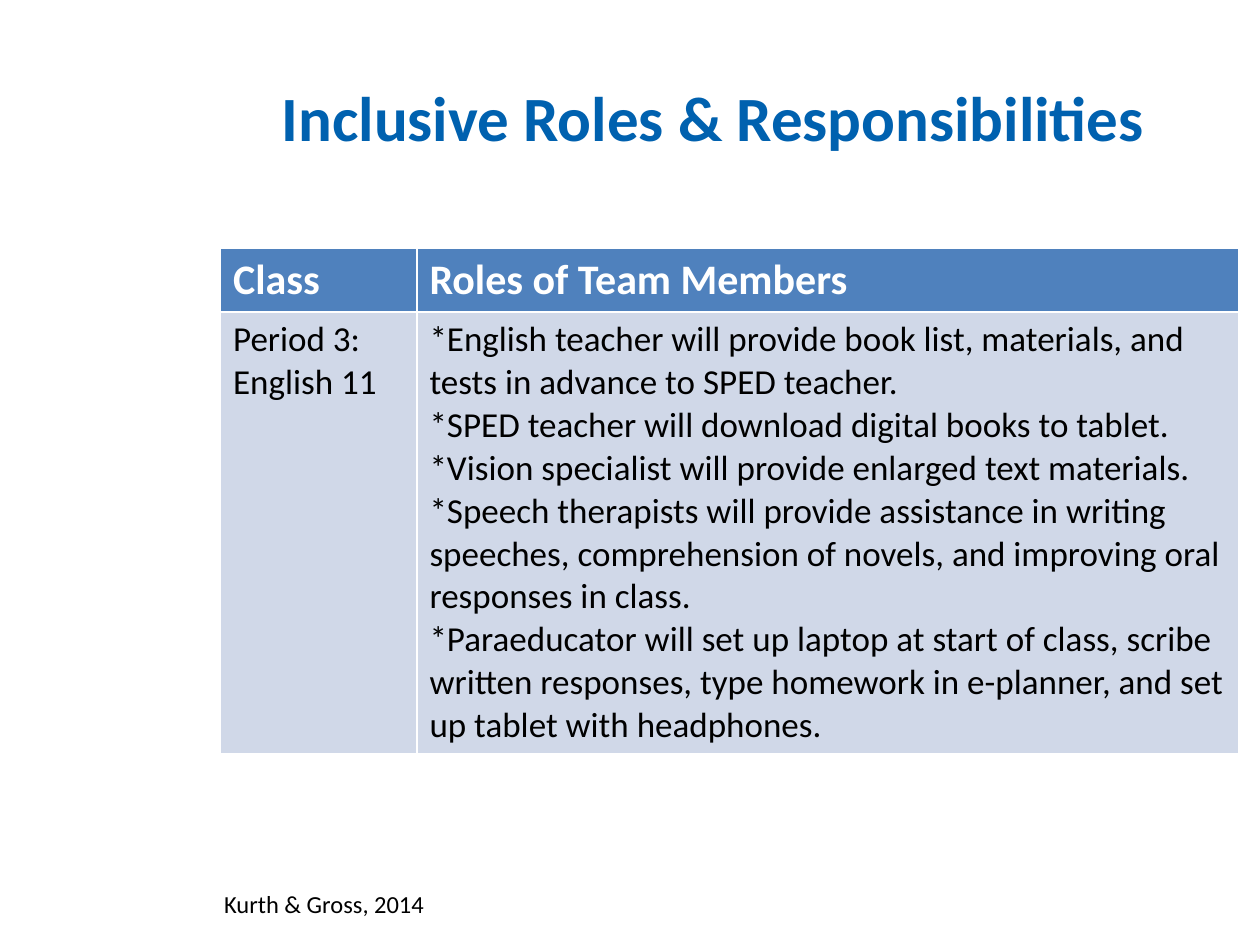
from dataclasses import dataclass

from pptx import Presentation
from pptx import util as u
from pptx.dml.color import RGBColor
from pptx.enum import text


@dataclass(frozen=True)
class Theme:
    font: str = "Calibri"
    title: str = "0061AF"
    header_fill: str = "4F81BD"
    header_text: str = "FFFFFF"
    body_fill: str = "D0D8E8"
    body_text: str = "000000"
    title_size: int = 36
    header_size: int = 24
    body_size: int = 20
    source_size: int = 14


THEME = Theme()
WIDTH, HEIGHT = u.Inches(10), u.Inches(7.5)

HEADINGS = ["Class", "Roles of Team Members"]
CLASS_NAME = ["Period 3: English 11"]
ROLES = [
    "*English teacher will provide book list, materials, and tests in advance to SPED teacher.",
    "*SPED teacher will download digital books to tablet.",
    "*Vision specialist will provide enlarged text materials.",
    "*Speech therapists will provide assistance in writing speeches, "
    "comprehension of novels, and improving oral responses in class.",
    "*Paraeducator will set up laptop at start of class, scribe written responses, "
    "type homework in e-planner, and set up tablet with headphones.",
]


def box(left, top, width, height):
    """Turn inches into shares of the slide's size, as left, top, width, height."""
    return (int(WIDTH * left / 10), int(HEIGHT * top / 7.5),
            int(WIDTH * width / 10), int(HEIGHT * height / 7.5))


def write(tf, lines, size, color, bold=False, align=None):
    tf.text = "\n".join(lines)
    for p in tf.paragraphs:
        p.alignment = align
        p.font.name = THEME.font
        p.font.size = u.Pt(size)
        p.font.bold = bold
        p.font.color.rgb = RGBColor.from_string(color)


def add_title(slide, area):
    sp = slide.shapes.title
    sp.left, sp.top, sp.width, sp.height = area
    sp.text_frame.vertical_anchor = text.MSO_ANCHOR.MIDDLE
    write(sp.text_frame, ["Inclusive Roles & Responsibilities"],
          THEME.title_size, THEME.title, True, text.PP_ALIGN.CENTER)


def add_roles_table(slide, area):
    left, top, width, height = area
    table = slide.shapes.add_table(2, 2, left, top, width, height).table
    class_width = int(width * 0.193)
    header_height = int(height * 0.125)
    table.columns[0].width, table.columns[1].width = class_width, width - class_width
    table.rows[0].height, table.rows[1].height = header_height, height - header_height

    rows = [
        ([[h] for h in HEADINGS], THEME.header_fill, THEME.header_size, THEME.header_text, True),
        ([CLASS_NAME, ROLES], THEME.body_fill, THEME.body_size, THEME.body_text, False),
    ]
    for r, (contents, fill, size, color, bold) in enumerate(rows):
        for c, lines in enumerate(contents):
            cell = table.cell(r, c)
            cell.fill.solid()
            cell.fill.fore_color.rgb = RGBColor.from_string(fill)
            write(cell.text_frame, lines, size, color, bold)


def add_source(slide, area):
    tf = slide.shapes.add_textbox(*area).text_frame
    tf.word_wrap = False
    tf.auto_size = text.MSO_AUTO_SIZE.SHAPE_TO_FIT_TEXT
    write(tf, ["Kurth & Gross, 2014"], THEME.source_size, THEME.body_text)


def main():
    prs = Presentation()
    prs.slide_width, prs.slide_height = WIDTH, HEIGHT
    slide = prs.slides.add_slide(prs.slide_layouts.get_by_name("Title Only"))
    add_title(slide, box(1.82, 0.3, 7.68, 1.25))
    add_roles_table(slide, box(1.75, 1.97, 8.08, 3.99))
    add_source(slide, box(1.68, 7.01, 1.89, 0.34))
    prs.save("out.pptx")


if __name__ == "__main__":
    main()
